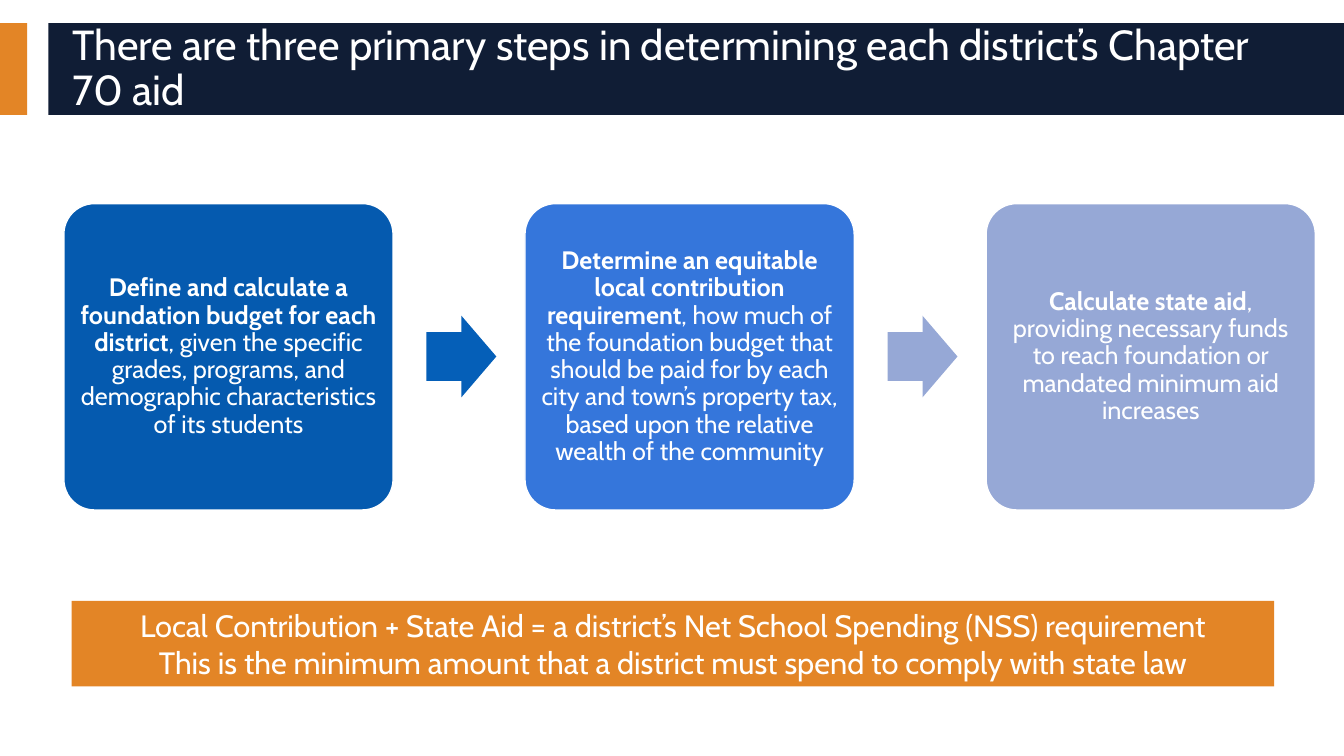
from dataclasses import dataclass
from pptx import Presentation
from pptx.dml.color import RGBColor
from pptx.enum.shapes import MSO_SHAPE as Geo
from pptx.enum.text import MSO_ANCHOR as Anchor, MSO_AUTO_SIZE as AutoSize, PP_ALIGN as Align
from pptx.util import Inches, Pt

WIDTH, HEIGHT = Inches(13.33), Inches(7.5)
FONT = "Cabin"
WHITE, NAVY, ORANGE = "FFFFFF", "101D35", "E38526"
STEP_LEFT, STEP_PITCH, ARROW_OFFSET = 4.75, 34.31, 26.98


@dataclass(frozen=True)
class Box:
    """Position and size in percent of the slide's width and height."""
    left: float
    top: float
    width: float
    height: float

    def emu(self) -> tuple[int, int, int, int]:
        return (int(WIDTH * self.left / 100), int(HEIGHT * self.top / 100),
                int(WIDTH * self.width / 100), int(HEIGHT * self.height / 100))


@dataclass(frozen=True)
class Step:
    action: str
    detail: str
    fill: str
    arrow_fill: str = ""


STEPS = [
    Step("Define and calculate a foundation budget for each district",
         ", given the specific grades, programs, and demographic characteristics of its students",
         "055AAF", "055FB8"),
    Step("Determine an equitable local contribution requirement",
         ", how much of the foundation budget that should be paid for by each city and town’s "
         "property tax, based upon the relative wealth of the community",
         "3576DB", "96A8D6"),
    Step("Calculate state aid",
         ", providing necessary funds to reach foundation or mandated minimum aid increases",
         "96A8D6"),
]
SPENDING_LINES = [
    "Local Contribution + State Aid = a district’s Net School Spending (NSS) requirement",
    "This is the minimum amount that a district must spend to comply with state law",
]


def color(value: str) -> RGBColor:
    return RGBColor.from_string(value)


def apply(target, formats: dict) -> None:
    for name, value in formats.items():
        setattr(target, name, value)


def add_run(p, text: str, size: float, bold: bool = False) -> None:
    r = p.add_run()
    r.text = text
    apply(r.font, {"name": FONT, "size": Pt(size), "bold": bold})
    r.font.color.rgb = color(WHITE)


def add_block(s, geo: Geo, box: Box, fill: str, adjustments: tuple[float, ...] = ()):
    sp = s.shapes.add_shape(geo, *box.emu())
    sp.shadow.inherit = False
    sp.fill.solid()
    sp.fill.fore_color.rgb = color(fill)
    sp.line.fill.background()
    for i, value in enumerate(adjustments):
        sp.adjustments[i] = value
    return sp


def add_header(s) -> None:
    add_block(s, Geo.RECTANGLE, Box(0, 3.07, 2.03, 12.13), ORANGE)
    add_block(s, Geo.RECTANGLE, Box(3.6, 3.07, 96.4, 12.13), NAVY)
    title = s.shapes.title
    title.element.getparent().append(title.element)
    apply(title, dict(zip(("left", "top", "width", "height"),
                          Box(4.65, 4.27, 93.32, 9.87).emu())))
    tf = title.text_frame
    apply(tf, {"vertical_anchor": Anchor.MIDDLE, "word_wrap": True, "auto_size": AutoSize.NONE})
    p = tf.paragraphs[0]
    apply(p, {"alignment": Align.LEFT, "line_spacing": 0.9})
    add_run(p, "There are three primary steps in determining each district’s Chapter 70 aid", 30)


def add_step(s, step: Step, left: float) -> None:
    sp = add_block(s, Geo.ROUNDED_RECTANGLE, Box(left, 26.93, 24.5, 40.53), step.fill, (0.1,))
    sp.line.color.rgb = color(WHITE)
    sp.line.width = Pt(1)
    tf = sp.text_frame
    margins = dict.fromkeys(("margin_left", "margin_top", "margin_right", "margin_bottom"),
                            Inches(0.07))
    apply(tf, {"vertical_anchor": Anchor.MIDDLE, "word_wrap": True, **margins})
    p = tf.paragraphs[0]
    apply(p, {"alignment": Align.CENTER, "line_spacing": 0.9})
    add_run(p, step.action, 18, bold=True)
    add_run(p, step.detail, 18)
    if step.arrow_fill:
        add_block(s, Geo.RIGHT_ARROW, Box(left + ARROW_OFFSET, 41.76, 5.2, 10.8),
                  step.arrow_fill, (0.6, 0.5))


def add_spending_bar(s) -> None:
    sp = add_block(s, Geo.RECTANGLE, Box(5.33, 79.47, 89.48, 11.33), ORANGE)
    tf = sp.text_frame
    apply(tf, {"vertical_anchor": Anchor.MIDDLE, "word_wrap": True})
    for i, line in enumerate(SPENDING_LINES):
        p = tf.add_paragraph() if i else tf.paragraphs[0]
        p.alignment = Align.CENTER
        add_run(p, line, 22)


def main() -> None:
    prs = Presentation()
    apply(prs, {"slide_width": WIDTH, "slide_height": HEIGHT})
    s = prs.slides.add_slide(prs.slide_layouts[5])
    add_header(s)
    for i, step in enumerate(STEPS):
        add_step(s, step, STEP_LEFT + i * STEP_PITCH)
    add_spending_bar(s)
    prs.save("out.pptx")


if __name__ == "__main__":
    main()
